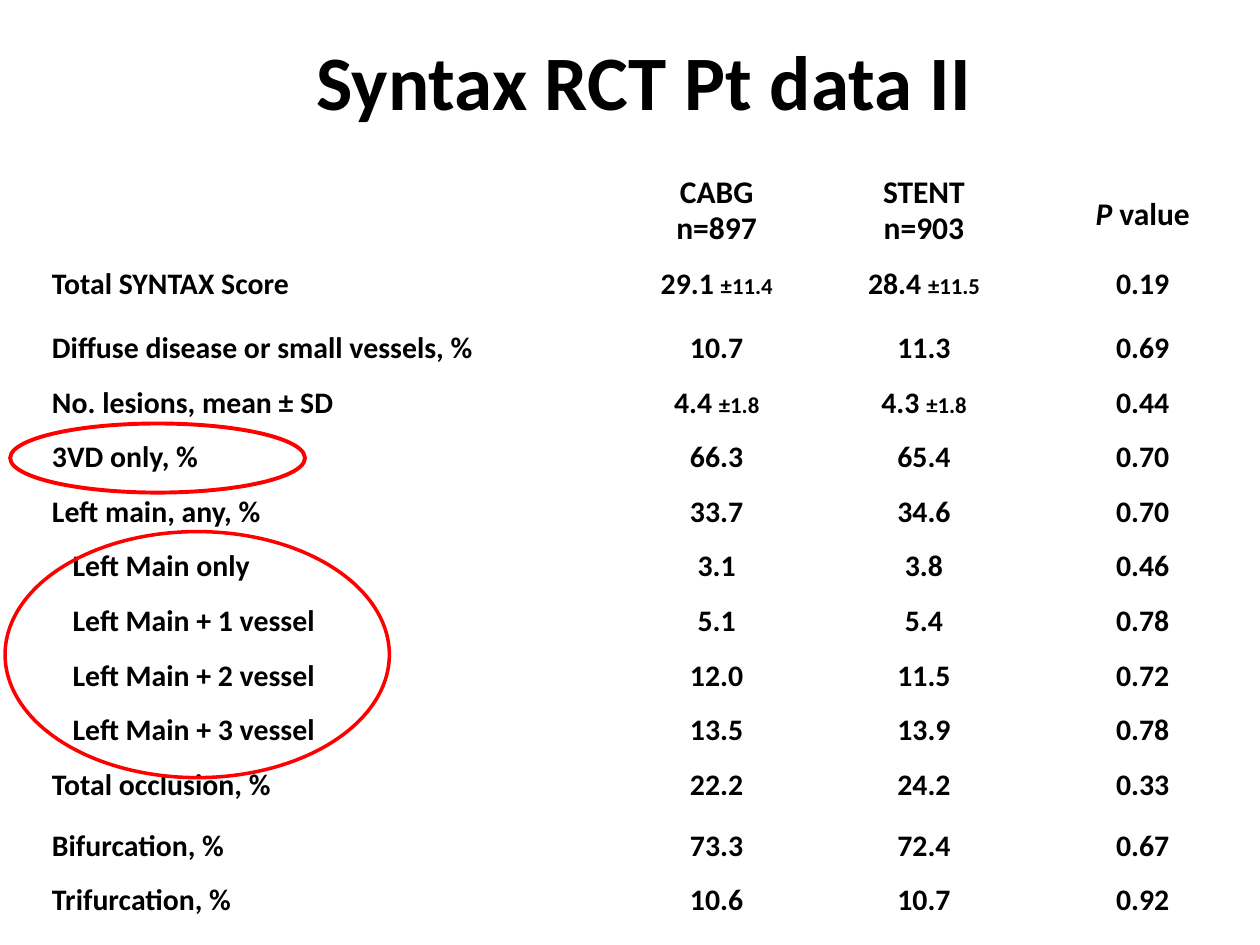
"""Build the patient data slide: a title, a table and two ringed groups."""
from pptx import Presentation
from pptx.dml.color import RGBColor
from pptx.enum import shapes, text
from pptx.util import Pt

HUES = {"ink": "000000", "ring": "FF0000"}
FACE = "Calibri"
TITLE = "Syntax RCT Pt data II"
HEADS = [("CABG", "n=897"), ("STENT", "n=903")]
ROWS = [
    ("Total SYNTAX Score", "29.1 ±11.4", "28.4 ±11.5", "0.19"),
    ("Diffuse disease or small vessels, %", "10.7", "11.3", "0.69"),
    ("No. lesions, mean ± SD", "4.4 ±1.8", "4.3 ±1.8", "0.44"),
    ("3VD only, %", "66.3", "65.4", "0.70"),
    ("Left main, any, %", "33.7", "34.6", "0.70"),
    ("Left Main only", "3.1", "3.8", "0.46"),
    ("Left Main + 1 vessel", "5.1", "5.4", "0.78"),
    ("Left Main + 2 vessel", "12.0", "11.5", "0.72"),
    ("Left Main + 3 vessel", "13.5", "13.9", "0.78"),
    ("Total occlusion, %", "22.2", "24.2", "0.33"),
    ("Bifurcation, %", "73.3", "72.4", "0.67"),
    ("Trifurcation, %", "10.6", "10.7", "0.92"),
]
WIDTHS = [328, 118, 119, 131]
ROW = 31.2
TALL = {0: 53.3, 1: 36.5, 9: 31.5, 10: 34.6}
RINGS = [((5.8, 242, 168.5, 39.5), 2.25), ((2.9, 303.8, 219.6, 140.6), 2)]


def hue(name):
    return RGBColor.from_string(HUES[name])


def write(para, words, size, slant=False):
    run = para.add_run()
    run.text = words
    font = run.font
    font.name, font.size, font.bold, font.italic = FACE, Pt(size), True, slant
    font.color.rgb = hue("ink")


def start(cell, align):
    para = cell.text_frame.paragraphs[0]
    para.alignment = align
    para.line_spacing = 0.95
    para.space_before = para.space_after = Pt(6)
    return para


def add_title(slide):
    title = slide.shapes.title
    title.left, title.top, title.width, title.height = map(Pt, (100, 11.5, 536, 67.7))
    frame = title.text_frame
    frame.vertical_anchor = text.MSO_ANCHOR.MIDDLE
    frame.paragraphs[0].alignment = text.PP_ALIGN.CENTER
    write(frame.paragraphs[0], TITLE, 44)


def add_data(slide):
    highs = [TALL.get(i, ROW) for i in range(len(ROWS) + 1)]
    table = slide.shapes.add_table(
        len(highs), len(WIDTHS), Pt(22.5), Pt(95.8), Pt(sum(WIDTHS)), Pt(sum(highs))
    ).table
    table.first_row = table.horz_banding = False
    for col, wide in zip(table.columns, WIDTHS):
        col.width = Pt(wide)
    for row, high in zip(table.rows, highs):
        row.height = Pt(high)
    for cell in table.iter_cells():
        cell.fill.background()

    mid = text.PP_ALIGN.CENTER
    for j, (name, count) in enumerate(HEADS, 1):
        para = start(table.cell(0, j), mid)
        write(para, name, 18)
        para.add_line_break()
        write(para, count, 18)
    cell = table.cell(0, 3)
    cell.vertical_anchor = text.MSO_ANCHOR.MIDDLE
    para = start(cell, mid)
    write(para, "P", 18, True)
    write(para, " value", 18)

    for i, (label, *values) in enumerate(ROWS, 1):
        cell = table.cell(i, 0)
        if label.startswith("Left Main"):
            cell.margin_left = Pt(19)
        write(start(cell, text.PP_ALIGN.LEFT), label, 17)
        for j, value in enumerate(values, 1):
            para = start(table.cell(i, j), mid)
            mean, sign, spread = value.partition("±")
            write(para, mean, 17)
            if sign:
                write(para, sign + spread, 13)


def add_rings(slide):
    for box, thick in RINGS:
        ring = slide.shapes.add_shape(shapes.MSO_SHAPE.OVAL, *map(Pt, box))
        ring.shadow.inherit = False
        ring.fill.background()
        ring.line.color.rgb = hue("ring")
        ring.line.width = Pt(thick)


def main():
    deck = Presentation()
    deck.slide_width, deck.slide_height = Pt(720), Pt(540)
    slide = deck.slides.add_slide(deck.slide_layouts[5])
    add_title(slide)
    add_data(slide)
    add_rings(slide)
    deck.save("out.pptx")


if __name__ == "__main__":
    main()
